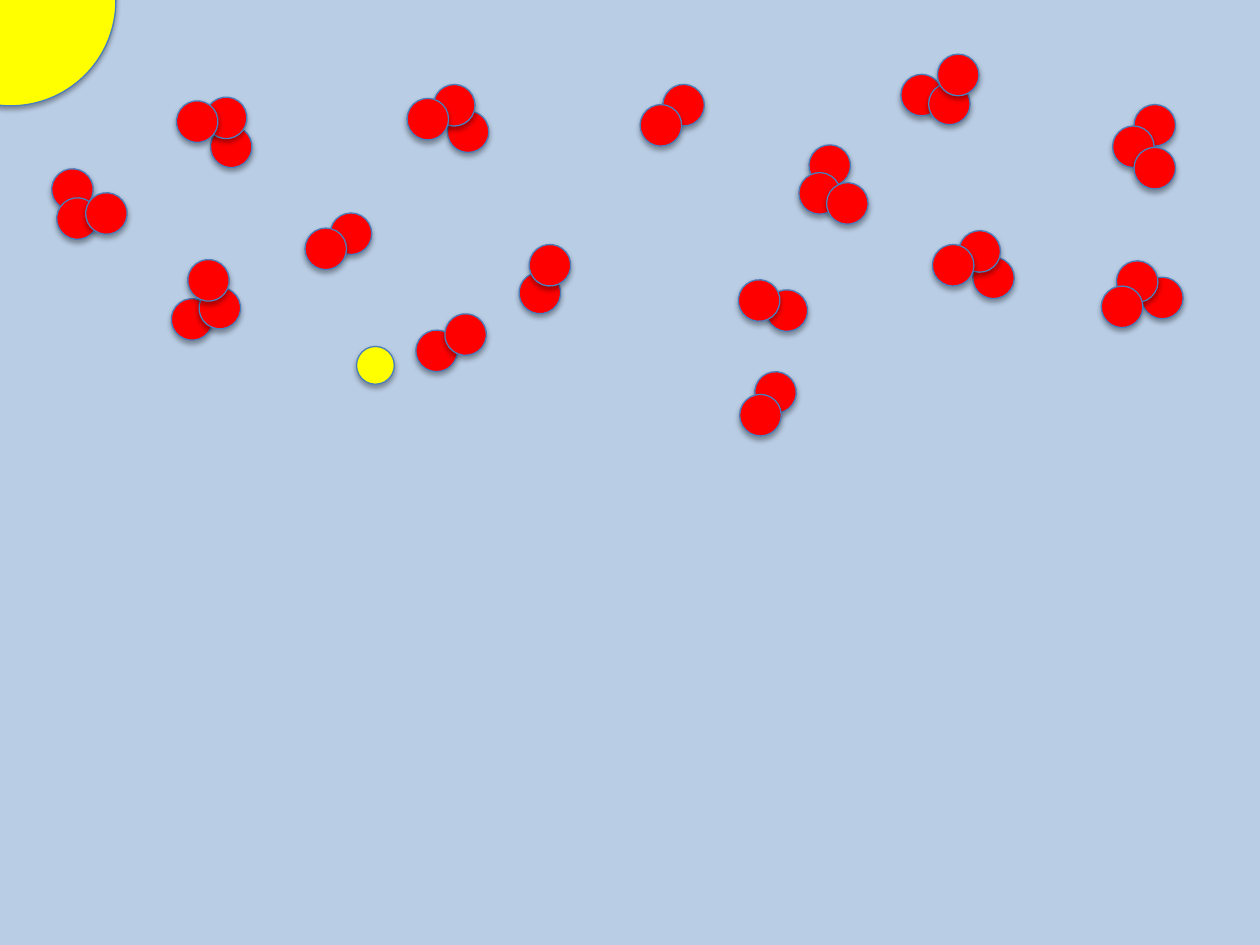
from lxml import etree
from pptx import Presentation
from pptx.dml.color import RGBColor
from pptx.enum.shapes import MSO_SHAPE
from pptx.oxml.ns import qn
from pptx.util import Inches, Pt

OVAL = MSO_SHAPE.OVAL
SKY = "B9CDE5"
YELLOW = "FFFF00"
RED = "FF0000"
OUTLINE = "4B7EBC"
ATOM_SIZE = 0.33

TRIPLES = [
    (197, [(7.72, 2.04), (7.61, 1.83), (7.4, 1.94)]),
    (330.2, [(7.15, 0.59), (7.37, 0.66), (7.44, 0.43)]),
    (35.3, [(0.41, 1.34), (0.45, 1.57), (0.68, 1.53)]),
    (195.9, [(3.55, 0.88), (3.44, 0.67), (3.23, 0.78)]),
    (63.9, [(6.42, 1.15), (6.34, 1.37), (6.56, 1.45)]),
    (292.9, [(1.36, 2.37), (1.58, 2.28), (1.49, 2.06)]),
    (167, [(9.06, 2.2), (8.86, 2.07), (8.74, 2.27)]),
    (216.4, [(1.67, 1), (1.63, 0.77), (1.4, 0.8)]),
    (90, [(9, 0.83), (8.83, 1), (9, 1.17)]),
]
PAIRS = [
    [(6.08, 2.3, 245.8), (5.86, 2.22, 245.8)],
    [(5.26, 0.67, 92.6), (5.08, 0.83, 92.6)],
    [(2.62, 1.69, 104.7), (2.42, 1.81, 104.7)],
    [(3.3, 2.62, 92.6), (3.53, 2.49, 336.7)],
    [(4.12, 2.16, 336.7), (4.2, 1.94, 336.7)],
    [(5.99, 2.95, 245.8), (5.87, 3.13, 104.7)],
]


def paint(fill, color):
    fill.solid()
    fill.fore_color.rgb = RGBColor.from_string(color)


def add_shadow(shape):
    shape.shadow.inherit = False
    effects = shape.element.spPr.find(qn("a:effectLst"))
    shadow = etree.SubElement(
        effects, qn("a:outerShdw"), blurRad=str(Pt(3.1)), dist=str(Pt(1.8)),
        dir="5400000", rotWithShape="0")
    color = etree.SubElement(shadow, qn("a:srgbClr"), val="000000")
    etree.SubElement(color, qn("a:alpha"), val="35000")


def add_ball(shapes, left, top, size, color, rotation=0):
    ball = shapes.add_shape(
        OVAL, Inches(left), Inches(top), Inches(size), Inches(size))
    ball.rotation = rotation
    paint(ball.fill, color)
    paint(ball.line.fill, OUTLINE)
    ball.line.width = Pt(0.75)
    add_shadow(ball)


def add_triple(shapes, rotation, atoms):
    molecule = shapes.add_group_shape()
    for left, top in atoms:
        add_ball(molecule.shapes, left, top, ATOM_SIZE, RED, rotation)


def add_pair(shapes, atoms):
    for left, top, rotation in atoms:
        add_ball(shapes, left, top, ATOM_SIZE, RED, rotation)


def main():
    prs = Presentation()
    prs.slide_width = Inches(10)
    prs.slide_height = Inches(7.5)
    slide = prs.slides.add_slide(prs.slide_layouts[6])
    paint(slide.background.fill, SKY)

    add_ball(slide.shapes, -0.75, -0.83, 1.67, YELLOW)
    for rotation, atoms in TRIPLES:
        add_triple(slide.shapes, rotation, atoms)
    for atoms in PAIRS:
        add_pair(slide.shapes, atoms)
    add_ball(slide.shapes, 2.83, 2.75, 0.3, YELLOW)

    prs.save("out.pptx")


if __name__ == "__main__":
    main()
